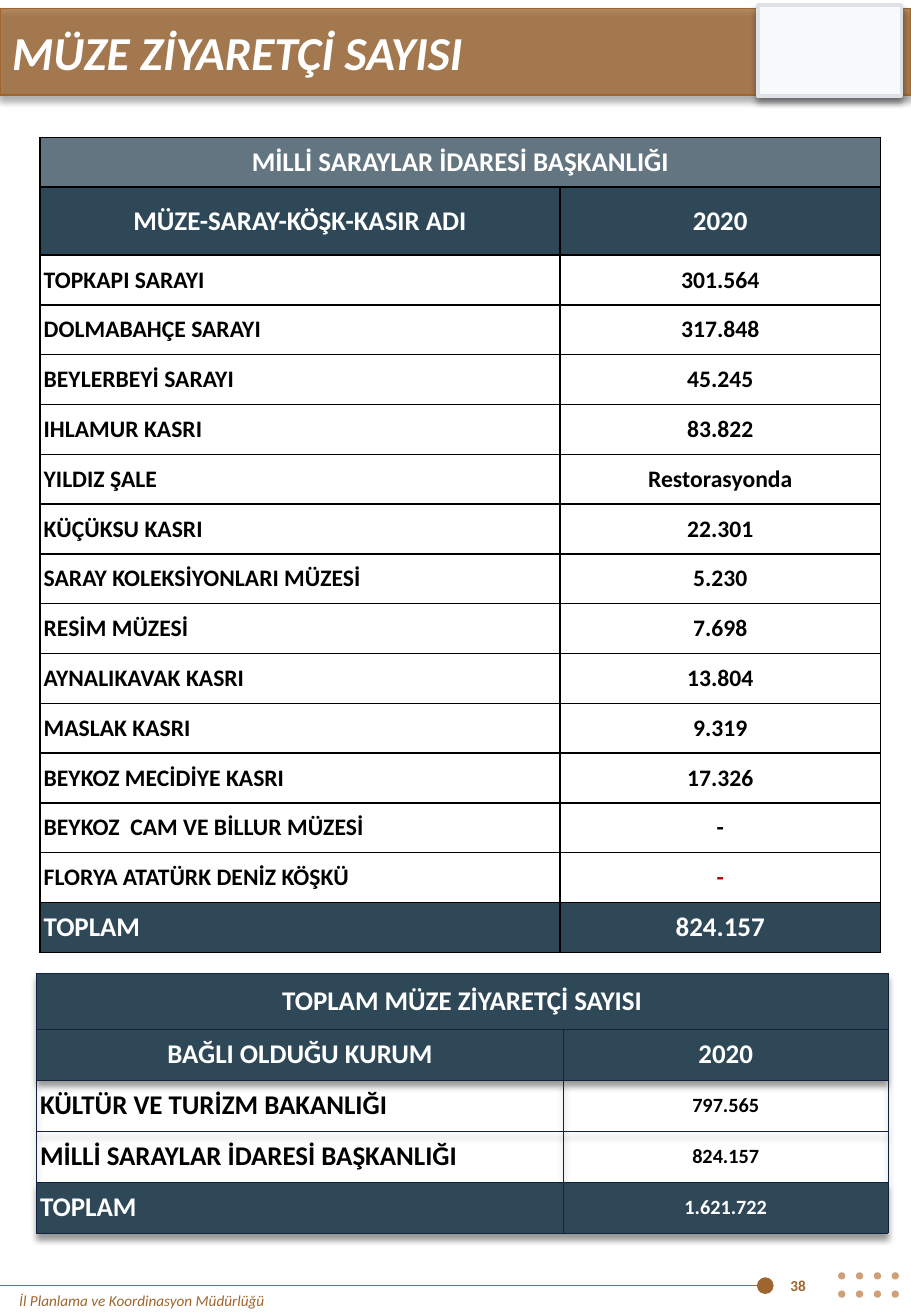
from lxml.etree import SubElement
from pptx import Presentation
from pptx.dml.color import RGBColor
from pptx.enum.shapes import MSO_CONNECTOR as Connector, MSO_SHAPE as Shape
from pptx.enum.text import MSO_ANCHOR as Anchor, PP_ALIGN as Align
from pptx.oxml.ns import qn
from pptx.util import Inches, Pt

# Content
TITLE = "MÜZE ZİYARETÇİ SAYISI"
FOOTER = "İl Planlama ve Koordinasyon Müdürlüğü"
PAGE_NUMBER = "38"
PALACE_ROWS = [
    ("MİLLİ SARAYLAR İDARESİ BAŞKANLIĞI", ""),
    ("MÜZE-SARAY-KÖŞK-KASIR ADI", "2020"),
    ("TOPKAPI SARAYI", "301.564"),
    ("DOLMABAHÇE SARAYI", "317.848"),
    ("BEYLERBEYİ SARAYI", "45.245"),
    ("IHLAMUR KASRI", "83.822"),
    ("YILDIZ ŞALE", "Restorasyonda"),
    ("KÜÇÜKSU KASRI", "22.301"),
    ("SARAY KOLEKSİYONLARI MÜZESİ", "5.230"),
    ("RESİM MÜZESİ", "7.698"),
    ("AYNALIKAVAK KASRI", "13.804"),
    ("MASLAK KASRI", "9.319"),
    ("BEYKOZ MECİDİYE KASRI", "17.326"),
    ("BEYKOZ  CAM VE BİLLUR MÜZESİ", "-"),
    ("FLORYA ATATÜRK DENİZ KÖŞKÜ", "-"),
    ("TOPLAM", "824.157"),
]
TOTAL_ROWS = [
    ("TOPLAM MÜZE ZİYARETÇİ SAYISI", ""),
    ("BAĞLI OLDUĞU KURUM", "2020"),
    ("KÜLTÜR VE TURİZM BAKANLIĞI", "797.565"),
    ("MİLLİ SARAYLAR İDARESİ BAŞKANLIĞI", "824.157"),
    ("TOPLAM", "1.621.722"),
]

# Style
FONT = "Calibri"
BROWN = RGBColor(0x9E, 0x65, 0x2E)
SAND = RGBColor(0xCD, 0xA0, 0x77)
SLATE = RGBColor(0x2F, 0x48, 0x58)
NAVY = RGBColor(0x14, 0x21, 0x3D)
RED = RGBColor(0xC0, 0x00, 0x00)
PALE = RGBColor(0xF8, 0xF9, 0xFA)
PALE_EDGE = RGBColor(0xDE, 0xE2, 0xE6)
BLACK = RGBColor(0, 0, 0)
WHITE = RGBColor(0xFF, 0xFF, 0xFF)


def write(frame, text, size, color, bold=False, italic=False, align=Align.LEFT):
    para = frame.paragraphs[0]
    para.alignment = align
    span = para.add_run()
    span.text = text
    font = span.font
    font.name, font.size, font.bold, font.italic = FONT, Pt(size), bold, italic
    font.color.rgb = color


def add_text(page, box, *style, anchor=Anchor.TOP, **options):
    frame = page.shapes.add_textbox(*map(Inches, box)).text_frame
    frame.word_wrap = True
    frame.vertical_anchor = anchor
    write(frame, *style, **options)


def set_alpha(element, percent):
    color = next(element.iter(qn("a:srgbClr")))
    SubElement(color, qn("a:alpha"), val=str(percent * 1000))


def add_shadow(effects):
    shadow = SubElement(effects, qn("a:outerShdw"), blurRad=str(Pt(4)),
                        dist=str(Pt(3)), dir="5400000", algn="t", rotWithShape="0")
    SubElement(shadow, qn("a:srgbClr"), val=str(BLACK))
    set_alpha(shadow, 40)


def add_panel(page, kind, box, fill, edge=None, edge_width=0, shadow=False):
    panel = page.shapes.add_shape(kind, *map(Inches, box))
    panel.fill.solid()
    panel.fill.fore_color.rgb = fill
    if edge is None:
        panel.line.fill.background()
    else:
        panel.line.color.rgb = edge
        panel.line.width = Pt(edge_width)
    panel.shadow.inherit = False
    if shadow:
        add_shadow(panel.element.spPr.find(qn("a:effectLst")))
    return panel


def add_borders(cell, color, width):
    properties = cell._tc.get_or_add_tcPr()
    for side in ("lnL", "lnR", "lnT", "lnB"):
        line = SubElement(properties, qn("a:" + side), w=str(Pt(width)))
        fill = SubElement(line, qn("a:solidFill"))
        SubElement(fill, qn("a:srgbClr"), val=str(color))


def add_visitor_table(page, rows, left, top, widths, heights, border, name_size, value_size,
                      total_size):
    box = (left, top, sum(widths), sum(heights))
    graphic = page.shapes.add_table(len(rows), len(widths), *map(Inches, box))
    table = graphic.table
    for column, width in zip(table.columns, widths):
        column.width = Inches(width)
    for line, height in zip(table.rows, heights):
        line.height = Inches(height)
    last = len(rows) - 1
    for row, texts in enumerate(rows):
        heading, dark = row < 2, row in (0, 1, last)
        for col, text in enumerate(texts):
            cell = table.cell(row, col)
            add_borders(cell, *border)
            cell.margin_left = cell.margin_right = Inches(0.03)
            cell.margin_top = cell.margin_bottom = 0
            cell.vertical_anchor = Anchor.MIDDLE
            if dark:
                cell.fill.solid()
                cell.fill.fore_color.rgb = SLATE
            else:
                cell.fill.background()
            if not text:
                continue
            if heading:
                size = 16
            elif row == last:
                size = (16, total_size)[col]
            else:
                size = (name_size, value_size)[col]
            color = WHITE if dark else BLACK
            if text == "-" and row == last - 1:
                color = RED
            align = Align.CENTER if heading or col else Align.LEFT
            write(cell.text_frame, text, size, color, bold=True, align=align)
    table.cell(0, 0).merge(table.cell(0, 1))
    return graphic


def main():
    deck = Presentation()
    deck.slide_width, deck.slide_height = Inches(7.5), Inches(10.83)
    page = deck.slides.add_slide(deck.slide_layouts[5])

    # Header band and emblem panel
    band = add_panel(page, Shape.RECTANGLE, (0, 0.07, 7.5, 0.71), BROWN, BROWN, 1, True)
    set_alpha(band.element.spPr.find(qn("a:solidFill")), 75)
    add_panel(page, Shape.RECTANGLE, (6.24, 0.04, 1.18, 0.75), PALE, PALE_EDGE, 2, True)

    # Title, in front of the band
    title = page.shapes.title
    title.left, title.top, title.width, title.height = map(Inches, (0, 0.14, 7.5, 0.57))
    title.element.getparent().append(title.element)
    write(title.text_frame, TITLE, 28, WHITE, bold=True, italic=True)

    # Footer rule with a round end, and dot grid
    rule = page.shapes.add_connector(
        Connector.STRAIGHT, *map(Inches, (6.3, 10.58, 0, 10.58)))
    rule.line.color.rgb = BROWN
    rule.line.width = Pt(0.5)
    outline = rule.element.spPr.find(qn("a:ln"))
    SubElement(outline, qn("a:headEnd"), type="oval", w="lg", len="lg")
    SubElement(rule.element.spPr, qn("a:effectLst"))
    for row in range(2):
        for col in range(4):
            dot = (6.9 + 0.147 * col, 10.47 + 0.15 * row, 0.06, 0.06)
            add_panel(page, Shape.OVAL, dot, SAND)

    # Footer text
    add_text(page, (0.06, 10.58, 4.69, 0.25), FOOTER, 9, BROWN, italic=True)
    add_text(page, (6.41, 10.37, 0.5, 0.42), PAGE_NUMBER, 9, BROWN, bold=True,
             anchor=Anchor.MIDDLE)

    # Palace visitors
    palaces = add_visitor_table(page, PALACE_ROWS, 0.33, 1.13, (4.28, 2.64),
                                [0.41, 0.56] + [0.41] * 14, (BLACK, 1), 14, 14, 16)
    set_alpha(palaces.table.cell(0, 0)._tc.tcPr.find(qn("a:solidFill")), 75)

    # All museum visitors
    totals = add_visitor_table(page, TOTAL_ROWS, 0.3, 8.01, (4.34, 2.67),
                               [0.46] + [0.42] * 4, (NAVY, 0.25), 16, 12, 12)
    properties = next(totals.element.iter(qn("a:tblPr")))
    effects = SubElement(properties, qn("a:effectLst"))
    properties.insert(0, effects)
    add_shadow(effects)

    deck.save("out.pptx")


if __name__ == "__main__":
    main()
